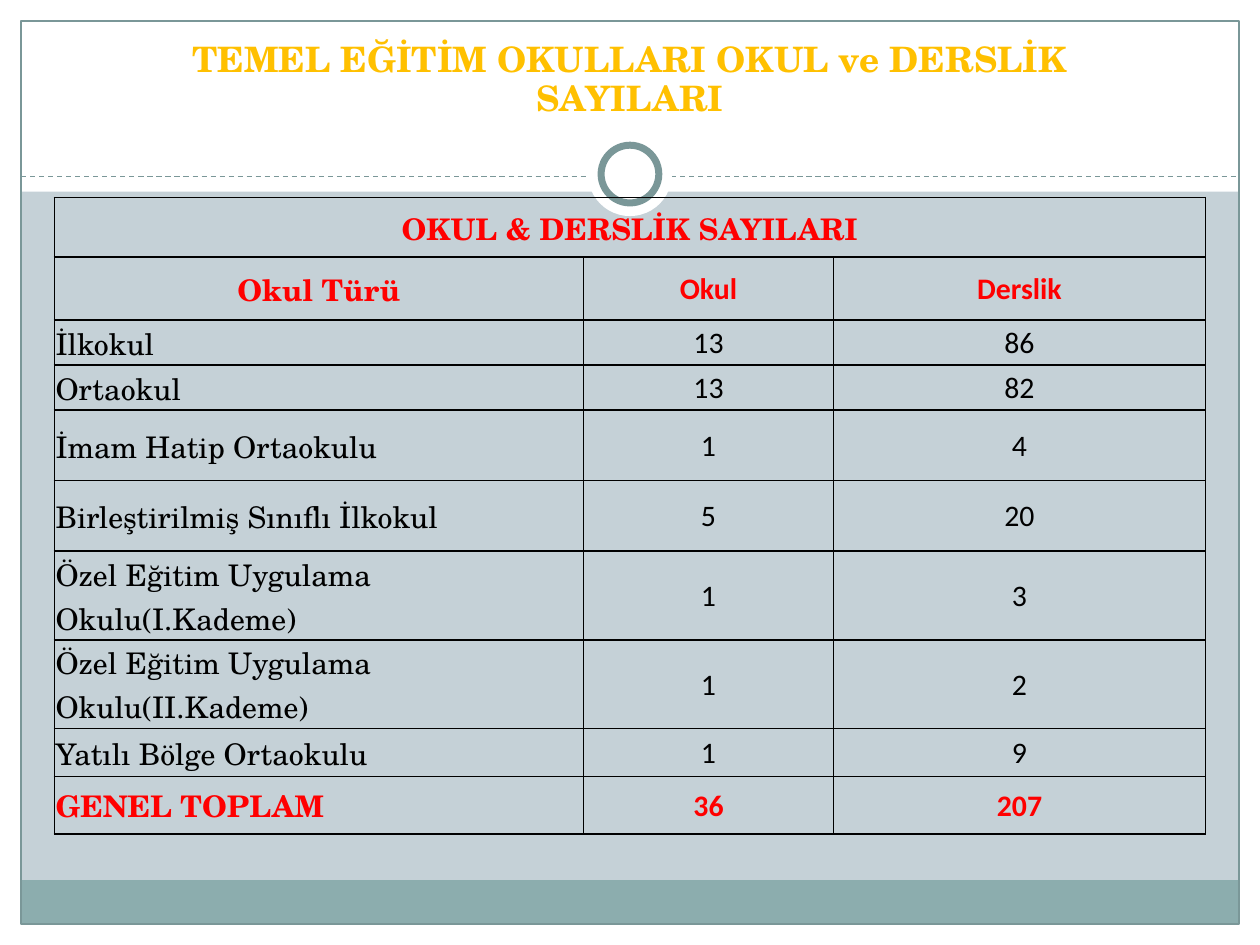
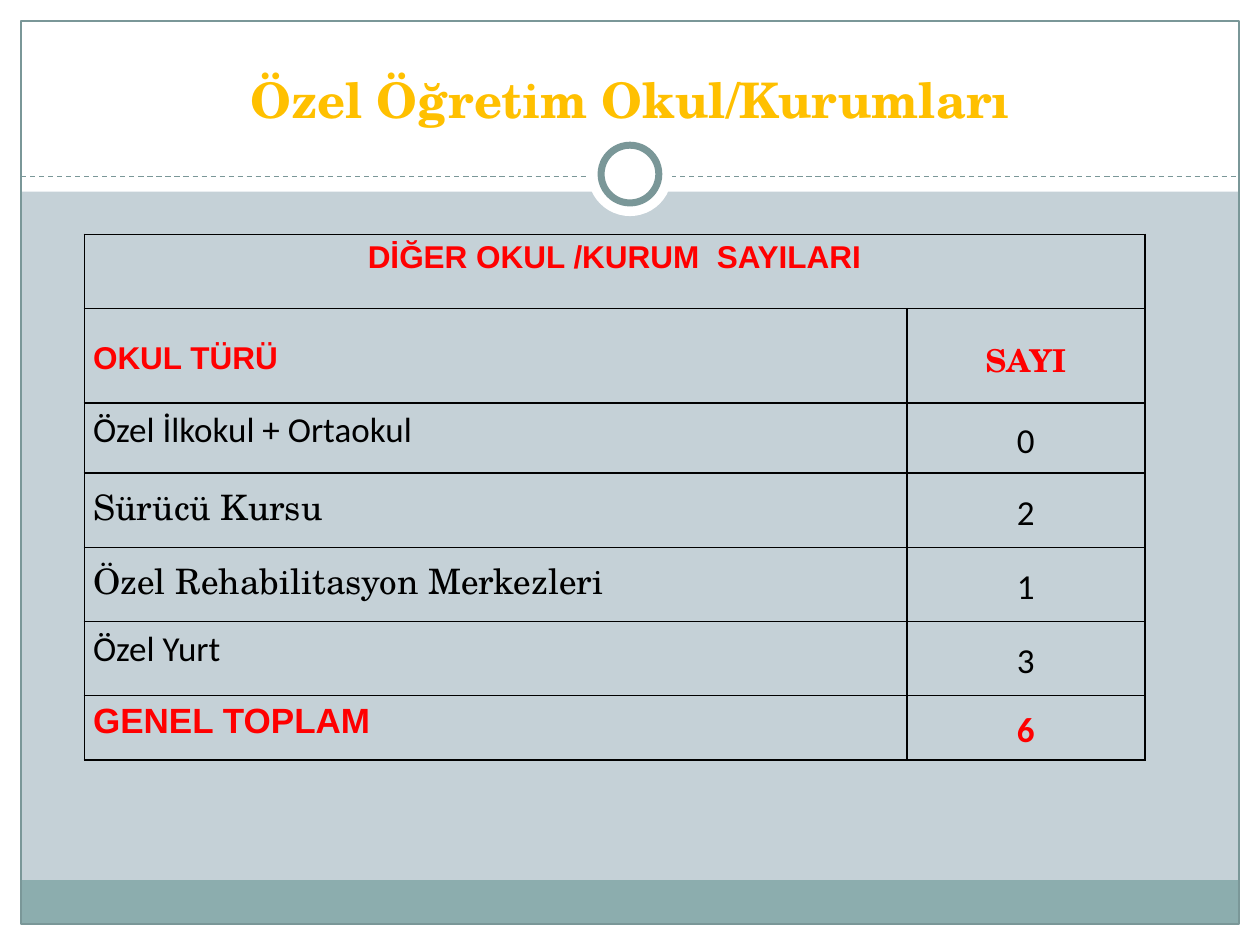
from lxml import etree
from pptx import Presentation
from pptx.dml.color import RGBColor
from pptx.enum import dml, shapes, text
from pptx.oxml import ns
from pptx.util import Pt

HUES = {"ground": "C5D1D7", "white": "FFFFFF", "band": "8CADAE", "line": "7A9798",
        "gold": "FFC000", "red": "FF0000", "black": "000000"}
SERIF, SANS, HEAD = "TeX Gyre Schola", "Calibri", "Arial"
WIDE, HIGH, EDGE = 720, 540, 12
MID, RULE = WIDE / 2, 101
RECT, OVAL = shapes.MSO_SHAPE.RECTANGLE, shapes.MSO_SHAPE.OVAL
LEFT, CENTER = text.PP_ALIGN.LEFT, text.PP_ALIGN.CENTER
TOP, MIDDLE, BOTTOM = (text.MSO_ANCHOR.TOP, text.MSO_ANCHOR.MIDDLE,
                       text.MSO_ANCHOR.BOTTOM)


def hue(name):
    return RGBColor.from_string(HUES[name])


class Deck:
    def __init__(self):
        self.prs = Presentation()
        self.prs.slide_width, self.prs.slide_height = Pt(WIDE), Pt(HIGH)
        self.slide = None

    def page(self, title, top, height, size, gap):
        self.slide = self.prs.slides.add_slide(self.prs.slide_layouts[5])
        fill = self.slide.background.fill
        fill.solid()
        fill.fore_color.rgb = hue("ground")
        self.frame()
        self.title(title, top, height, size, gap)

    def frame(self):
        """Draw the white margins, footer band, outline, dashed rule and ring."""
        inner = WIDE - 2 * EDGE
        for box in ((0, HIGH - EDGE, WIDE, EDGE), (0, 0, WIDE, 109.5),
                    (0, 0, EDGE, HIGH), (WIDE - EDGE, 0, EDGE, HIGH)):
            self.shape(RECT, box, "white")
        self.shape(RECT, (EDGE, 503, inner, 25), "band")
        self.shape(RECT, (EDGE, EDGE, inner, HIGH - 2 * EDGE), None, 0.75)
        self.rule(EDGE, WIDE - EDGE, RULE)
        self.ring(48)
        self.ring(33, 4)

    def shape(self, kind, box, fill, width=0):
        item = self.slide.shapes.add_shape(kind, *map(Pt, box))
        item.shadow.inherit = False
        if fill:
            item.fill.solid()
            item.fill.fore_color.rgb = hue(fill)
        else:
            item.fill.background()
        if width:
            item.line.color.rgb = hue("line")
            item.line.width = Pt(width)
        else:
            item.line.fill.background()

    def ring(self, size, width=0):
        box = (MID - size / 2, 99.5 - size / 2, size, size)
        self.shape(OVAL, box, "white", width)

    def rule(self, left, right, y):
        line = self.slide.shapes.add_connector(
            shapes.MSO_CONNECTOR.STRAIGHT, Pt(left), Pt(y), Pt(right), Pt(y))
        line.line.color.rgb = hue("line")
        line.line.width = Pt(0.75)
        line.line.dash_style = dml.MSO_LINE.DASH
        etree.SubElement(line._element.spPr, ns.qn("a:effectLst"))

    def title(self, words, top, height, size, gap):
        item = self.slide.shapes.title
        item.left, item.top, item.width, item.height = map(Pt, (48, top, 624, height))
        self.slide.shapes._spTree.append(item._element)  # bring to front
        frame = item.text_frame
        frame.word_wrap = True
        frame.auto_size = text.MSO_AUTO_SIZE.NONE
        frame.vertical_anchor = BOTTOM
        self.label(frame, words, SERIF, size, "gold", True, CENTER, gap)

    def label(self, frame, words, face, size, color, bold, align, gap):
        frame.text = words
        par = frame.paragraphs[0]
        par.alignment, par.line_spacing = align, gap
        font = par.font
        font.name, font.size, font.bold = face, Pt(size), bold
        font.color.rgb = hue(color)

    def table(self, left, top, cols, highs, pads):
        item = self.slide.shapes.add_table(
            len(highs), len(cols), Pt(left), Pt(top), Pt(sum(cols)), Pt(sum(highs)))
        grid = item.table
        grid.first_row = grid.horz_banding = False
        for col, width in zip(grid.columns, cols):
            col.width = Pt(width)
        for row, high in zip(grid.rows, highs):
            row.height = Pt(high)
        for cell in grid.iter_cells():
            (cell.margin_left, cell.margin_top,
             cell.margin_right, cell.margin_bottom) = map(Pt, pads)
            self.border(cell)
            cell.fill.background()
        grid.cell(0, 0).merge(grid.cell(0, len(cols) - 1))
        return grid

    def border(self, cell):
        props = cell._tc.get_or_add_tcPr()
        for side in ("lnL", "lnR", "lnT", "lnB"):
            line = etree.SubElement(props, ns.qn("a:" + side), w=str(Pt(1)))
            fill = etree.SubElement(line, ns.qn("a:solidFill"))
            etree.SubElement(fill, ns.qn("a:srgbClr"), val=HUES["black"])

    def cell(self, grid, row, col, words, face, size, strong, align, anchor, gap):
        cell = grid.cell(row, col)
        cell.vertical_anchor = anchor
        self.label(cell.text_frame, words, face, size,
                   "red" if strong else "black", strong, align, gap)


def schools(deck):
    deck.page("TEMEL EĞİTİM OKULLARI OKUL ve DERSLİK SAYILARI", 21, 51, 20, 0.93)
    rows = [
        ("OKUL & DERSLİK SAYILARI",),
        ("Okul Türü", "Okul", "Derslik"),
        ("İlkokul", "13", "86"),
        ("Ortaokul", "13", "82"),
        ("İmam Hatip Ortaokulu", "1", "4"),
        ("Birleştirilmiş Sınıflı İlkokul", "5", "20"),
        ("Özel Eğitim Uygulama Okulu(I.Kademe)", "1", "3"),
        ("Özel Eğitim Uygulama Okulu(II.Kademe)", "1", "2"),
        ("Yatılı Bölge Ortaokulu", "1", "9"),
        ("GENEL TOPLAM", "36", "207"),
    ]
    highs = (34, 36, 21, 21, 40.3, 40.3, 41, 41, 27.4, 33)
    grid = deck.table(31, 113, (302.4, 143, 212.4), highs, (0.72, 0.72, 0.72, 0))
    for r, row in enumerate(rows):
        strong = r < 2 or r == len(rows) - 1
        for c, words in enumerate(row):
            deck.cell(grid, r, c, words, SANS if c else SERIF, 17, strong,
                      CENTER if c or r < 2 else LEFT, MIDDLE, 1)


def private(deck):
    deck.page("Özel Öğretim Okul/Kurumları", 21.6, 55.4, 28, 1.15)
    rows = [
        (HEAD, "DİĞER OKUL /KURUM  SAYILARI"),
        (HEAD, "OKUL TÜRÜ", "SAYI"),
        (SANS, "Özel İlkokul + Ortaokul", "0"),
        (SERIF, "Sürücü Kursu", "2"),
        (SERIF, "Özel Rehabilitasyon Merkezleri", "1"),
        (SANS, "Özel Yurt", "3"),
        (HEAD, "GENEL TOPLAM", "6"),
    ]
    highs = (42.4, 54, 40, 42.4, 42.4, 42.4, 36.7)
    grid = deck.table(48.2, 134, (470, 136), highs, (5, 0, 5, 0))
    for r, (face, *row) in enumerate(rows):
        strong = r < 2 or r == len(rows) - 1
        for c, words in enumerate(row):
            if c:
                face = SERIF if r == 1 else SANS
            deck.cell(grid, r, c, words, face, 18 if r < 2 else 20, strong,
                      CENTER if c or r == 0 else LEFT,
                      MIDDLE if c or r == 1 else TOP, 1.15)


def main():
    deck = Deck()
    schools(deck)
    private(deck)
    deck.prs.save("out.pptx")


if __name__ == "__main__":
    main()
